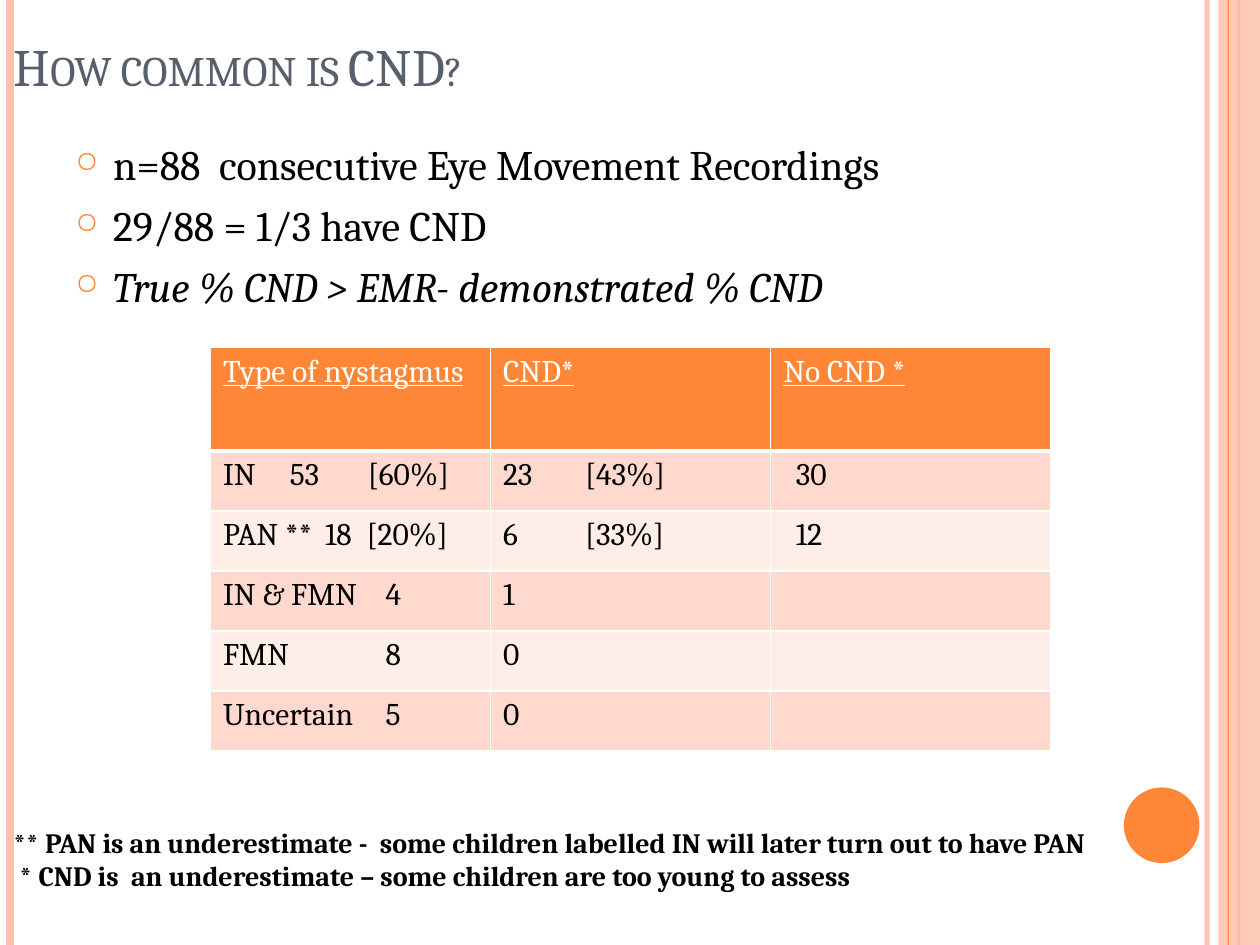
from lxml import etree
from pptx import Presentation
from pptx.dml.color import RGBColor
from pptx.enum import shapes, text
from pptx.oxml.ns import qn
from pptx import util as u

ORANGE = RGBColor(0xFE, 0x86, 0x37)
PEACH = RGBColor(0xFE, 0xC3, 0xAE)
BAND_DARK = RGBColor(0xFF, 0xD9, 0xCE)
BAND_LIGHT = RGBColor(0xFF, 0xED, 0xE8)
SLATE = RGBColor(0x57, 0x5F, 0x6D)
BLACK = RGBColor(0x00, 0x00, 0x00)
WHITE = RGBColor(0xFF, 0xFF, 0xFF)

COLUMNS, ROWS = 100, 75  # grid that covers the slide
TITLE_ONLY = 5


def child(parent, tag, **attributes):
    element = etree.SubElement(parent, qn(tag))
    for name, value in attributes.items():
        element.set(name, str(value))
    return element


class SlideBuilder:
    font = "Cambria"

    def __init__(self, deck):
        self.cell_width = deck.slide_width / COLUMNS
        self.cell_height = deck.slide_height / ROWS
        self.page = deck.slides.add_slide(deck.slide_layouts[TITLE_ONLY])

    def x(self, columns):
        return u.Emu(round(columns * self.cell_width))

    def y(self, rows):
        return u.Emu(round(rows * self.cell_height))

    def area(self, left, top, width, height):
        return self.x(left), self.y(top), self.x(width), self.y(height)

    def style(self, para, size, color, **flags):
        para.font.name = self.font
        para.font.size = u.Pt(size)
        para.font.color.rgb = color
        for name, value in flags.items():
            setattr(para.font, name, value)

    def set_opacity(self, shape, percent):
        color = next(shape._element.spPr.iter(qn("a:srgbClr")))
        child(color, "a:alpha", val=percent * 1000)

    def vertical_line(self, column, color, width, opacity=100):
        line = self.page.shapes.add_connector(
            shapes.MSO_CONNECTOR.STRAIGHT, self.x(column), 0, self.x(column), self.y(ROWS))
        line.line.color.rgb = color
        line.line.width = u.Pt(width)
        if opacity < 100:
            self.set_opacity(line, opacity)
        child(line._element.spPr, "a:effectLst")

    def block(self, kind, area, color, opacity=100):
        shape = self.page.shapes.add_shape(kind, *self.area(*area))
        shape.shadow.inherit = False
        shape.fill.solid()
        shape.fill.fore_color.rgb = color
        shape.line.fill.background()
        if opacity < 100:
            self.set_opacity(shape, opacity)

    def title(self, words, area):
        title = self.page.shapes.title
        title.left, title.top, title.width, title.height = self.area(*area)
        frame = title.text_frame
        frame.text = words
        frame.auto_size = text.MSO_AUTO_SIZE.NONE
        frame.vertical_anchor = text.MSO_ANCHOR.BOTTOM
        para = frame.paragraphs[0]
        para.alignment = text.PP_ALIGN.LEFT
        self.style(para, 30, SLATE)
        para.runs[0]._r.get_or_add_rPr().set("cap", "small")

    def paragraphs(self, lines, area, size, **flags):
        frame = self.page.shapes.add_textbox(*self.area(*area)).text_frame
        frame.word_wrap = True
        frame.text = "\n".join(lines)
        for para in frame.paragraphs:
            self.style(para, size, BLACK, **flags)
        return frame.paragraphs

    def bullets(self, lines, area):
        paras = self.paragraphs(lines, area, 24)
        for para in paras:
            para.space_before = u.Pt(6)
            properties = para._p.get_or_add_pPr()
            properties.set("marL", str(self.x(3)))
            properties.set("indent", str(-self.x(3)))
            bullet_color = etree.Element(qn("a:buClr"))
            child(bullet_color, "a:srgbClr", val=ORANGE)
            bullet_size = etree.Element(qn("a:buSzPct"), val="70000")
            bullet = etree.Element(qn("a:buChar"), char="○")
            spacing = properties.find(qn("a:spcBef"))
            for element in (bullet, bullet_size, bullet_color):
                spacing.addnext(element)
        return paras

    def fill_cell(self, cell, words, fill, color, header, stops=(), indent=0):
        para = cell.text_frame.paragraphs[0]
        para.text = words
        self.style(para, 18, color, bold=False, underline=header)
        properties = para._p.get_or_add_pPr()
        properties.set("marL", str(self.x(indent)))
        if stops:
            tabs = etree.Element(qn("a:tabLst"))
            for stop in stops:
                child(tabs, "a:tab", pos=self.x(stop), algn="l")
            properties.insert(0, tabs)
        # Borders come before the fill in the cell properties
        cell_properties = cell._tc.get_or_add_tcPr()
        for side in "LRTB":
            points = 3 if header and side == "B" else 1
            border = child(cell_properties, f"a:ln{side}", w=u.Pt(points))
            child(child(border, "a:solidFill"), "a:srgbClr", val=WHITE)
        cell.fill.solid()
        cell.fill.fore_color.rgb = fill

    def table(self, headers, records, area, header_height, row_height):
        table = self.page.shapes.add_table(
            len(records) + 1, len(headers), *self.area(*area)).table
        for row in table.rows:
            row.height = self.y(row_height)
        table.rows[0].height = self.y(header_height)
        for column, words in enumerate(headers):
            self.fill_cell(table.cell(0, column), words, ORANGE, WHITE, True)
        for number, (values, stops) in enumerate(records, 1):
            fill = BAND_DARK if number % 2 else BAND_LIGHT
            layouts = ((stops, 0), ((6.5,), 0), ((), 1))
            for column, (words, layout) in enumerate(zip(values, layouts)):
                self.fill_cell(table.cell(number, column), words, fill, BLACK, False, *layout)


def main():
    deck = Presentation()
    deck.slide_width, deck.slide_height = u.Inches(10), u.Inches(7.5)
    slide = SlideBuilder(deck)

    # Side stripes and corner disc
    slide.vertical_line(95.8, PEACH, 3, 93)
    slide.vertical_line(0.8, PEACH, 4.5)
    slide.vertical_line(98.3, ORANGE, 1.5)
    slide.block(shapes.MSO_SHAPE.RECTANGLE, (96.7, 0, 3.3, ROWS), PEACH, 87)
    slide.vertical_line(97.5, ORANGE, 0.75)
    slide.block(shapes.MSO_SHAPE.OVAL, (89.2, 62.5, 6, 6), ORANGE)

    # Title and key findings
    slide.title("How common is CND?", (0.1, -3.5, 94.9, 11.7))
    findings = slide.bullets([
        "n=88  consecutive Eye Movement Recordings",
        "29/88 = 1/3 have CND",
        "True % CND > EMR- demonstrated % CND",
    ], (5, 10.5, 90, 15))
    findings[-1].font.italic = True

    # Footnotes
    slide.paragraphs([
        "** PAN is an underestimate -  some children labelled IN will later turn out to have PAN",
        " * CND is  an underestimate – some children are too young to assess",
    ], (0.1, 65, 99.9, 9.1), 16, bold=True)

    # Counts by type of nystagmus, with the tab stops of the first column
    slide.table(("Type of nystagmus", "CND*", "No CND *"), [
        (("IN\t53\t[60%]", "23\t[43%]", "30"), (5.3, 11.5)),
        (("PAN **\t18\t[20%]", "6\t[33%]", "12"), (8.1, 11.4)),
        (("IN & FMN\t4", "1", ""), (12.9,)),
        (("FMN\t8", "0", ""), (12.9,)),
        (("Uncertain\t5", "0", ""), (12.9,)),
    ], (16.7, 27.6, 66.7, 32), 8.2, 4.76)

    deck.save("out.pptx")


if __name__ == "__main__":
    main()
